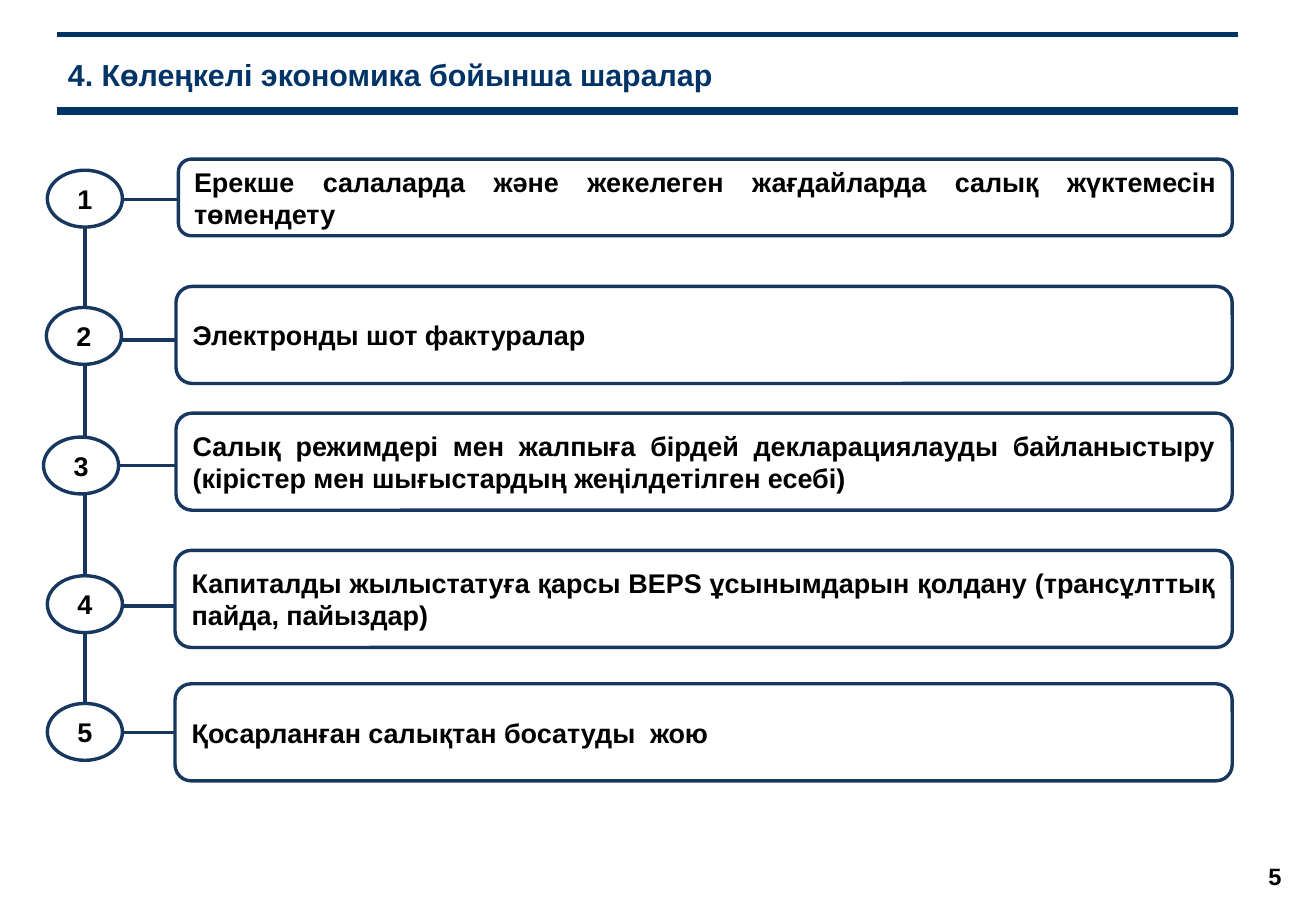
from lxml.etree import SubElement
from pptx import Presentation
from pptx.dml.color import RGBColor
from pptx.enum.shapes import MSO_CONNECTOR, MSO_SHAPE
from pptx.enum.text import MSO_ANCHOR, PP_ALIGN
from pptx.oxml.ns import qn
from pptx.util import Cm, Pt

NAVY = RGBColor(0x00, 0x33, 0x66)
BLUE = RGBColor(0x17, 0x37, 0x5E)
WHITE = RGBColor(0xFF, 0xFF, 0xFF)
BLACK = RGBColor(0x00, 0x00, 0x00)

OVAL_W, OVAL_H = 1.57, 1.19
BOX_RIGHT = 25.76
MEASURES = [
    ("Ерекше салаларда және жекелеген жағдайларда салық жүктемесін төмендету",
     (3.73, 3.33, 1.6), (0.99, 3.56), 4.17),
    ("Электронды шот фактуралар",
     (3.68, 5.99, 2.03), (0.97, 6.43), 7.11),
    ("Салық режимдері мен жалпыға бірдей декларациялауды байланыстыру "
     "(кірістер мен шығыстардың жеңілдетілген есебі)",
     (3.68, 8.64, 2.03), (0.91, 9.14), 9.73),
    ("Капиталды жылыстатуға қарсы BEPS ұсынымдарын қолдану (трансұлттық пайда, пайыздар)",
     (3.66, 11.51, 2.03), (0.99, 12.04), 12.67),
    ("Қосарланған салықтан босатуды  жою",
     (3.66, 14.3, 2.03), (0.99, 14.71), 15.32),
]


def add_line(slide, x1, y1, x2, y2, color=BLUE, width=2):
    """Draw a straight line without a shadow."""
    ln = slide.shapes.add_connector(MSO_CONNECTOR.STRAIGHT, Cm(x1), Cm(y1), Cm(x2), Cm(y2))
    ln.line.color.rgb = color
    ln.line.width = Pt(width)
    SubElement(ln._element.spPr, qn("a:effectLst"))


def write(sp, text, size, color=BLACK, align=PP_ALIGN.LEFT):
    """Put one bold, vertically centred paragraph into a shape."""
    tf = sp.text_frame
    tf.word_wrap = True
    tf.vertical_anchor = MSO_ANCHOR.MIDDLE
    p = tf.paragraphs[0]
    p.alignment = align
    r = p.add_run()
    r.text = text
    for name, value in {"name": "Arial", "size": Pt(size), "bold": True}.items():
        setattr(r.font, name, value)
    r.font.color.rgb = color


def add_panel(slide, kind, box, text, size, align, outlined=True):
    """Add a white shape with text and an optional blue outline."""
    sp = slide.shapes.add_shape(kind, *map(Cm, box))
    sp.shadow.inherit = False
    sp.fill.solid()
    sp.fill.fore_color.rgb = WHITE
    if outlined:
        sp.line.color.rgb = BLUE
        sp.line.width = Pt(2)
    else:
        sp.line.fill.background()
    write(sp, text, size, align=align)


def add_header(slide, left, top, width, height):
    """Place the title between a thin upper and a thick lower rule."""
    for y, weight in ((top, 3), (top + height, 4.5)):
        add_line(slide, left, y, left + width, y, NAVY, weight)
    sp = slide.shapes.add_textbox(Cm(left - 0.02), Cm(top + 0.03), Cm(width), Cm(height))
    write(sp, "4. Көлеңкелі экономика бойынша шаралар", 18, NAVY)


def add_measure(slide, number, text, box, oval, y):
    """Place a numbered oval, its box and the line that joins them."""
    left, top, height = box
    add_line(slide, oval[0] + OVAL_W, y, left, y)
    add_panel(slide, MSO_SHAPE.ROUNDED_RECTANGLE, (left, top, BOX_RIGHT - left, height),
              text, 16, PP_ALIGN.JUSTIFY)
    add_panel(slide, MSO_SHAPE.OVAL, (*oval, OVAL_W, OVAL_H), str(number), 16, PP_ALIGN.CENTER)


def main():
    """Build the slide of shadow economy measures."""
    prs = Presentation()
    prs.slide_width, prs.slide_height = Cm(27.51), Cm(19.05)
    slide = prs.slides.add_slide(prs.slide_layouts[6])
    add_header(slide, 1.19, 0.72, 24.69, 1.6)
    add_panel(slide, MSO_SHAPE.RECTANGLE, (25.83, 17.63, 1.65, 1.4), "5", 14,
              PP_ALIGN.CENTER, outlined=False)
    add_line(slide, 1.78, 4.75, 1.78, 14.71)
    for number, measure in enumerate(MEASURES, 1):
        add_measure(slide, number, *measure)
    prs.save("out.pptx")


if __name__ == "__main__":
    main()
